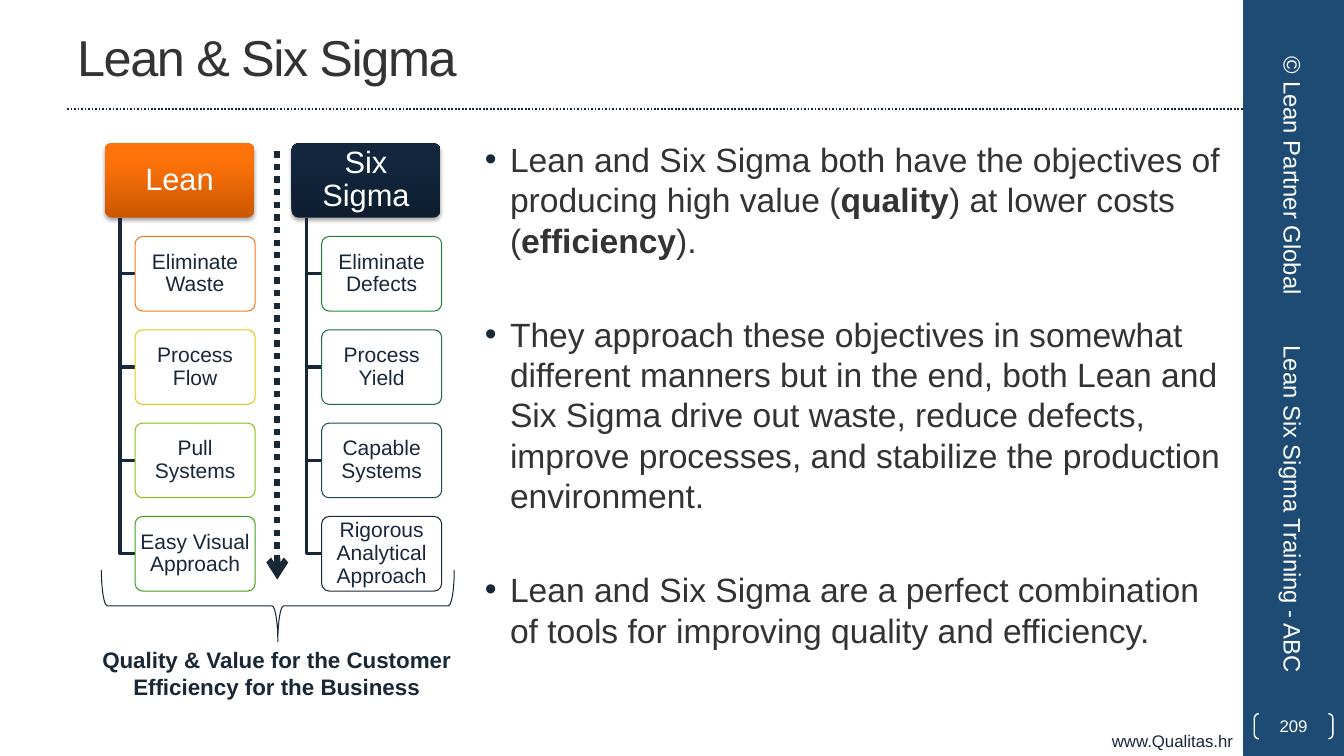
from lxml import etree
from pptx import Presentation, util as u
from pptx.dml.color import RGBColor
from pptx.enum import dml, shapes, text
from pptx.oxml import parse_xml
from pptx.oxml.ns import nsdecls, qn

W, H = 13.33, 7.5
SIDE = 12.33  # left edge of the side band
COLORS = {"white": "FFFFFF", "band": "1D4B74", "ink": "333333", "navy": "18283B",
          "rule": "17273B", "arrow": "182835"}
I = u.Inches
LEFT, CENTER, RIGHT = text.PP_ALIGN.LEFT, text.PP_ALIGN.CENTER, text.PP_ALIGN.RIGHT
TOP, MIDDLE = text.MSO_ANCHOR.TOP, text.MSO_ANCHOR.MIDDLE

prs = Presentation()
prs.slide_width, prs.slide_height = I(W), I(H)
s = prs.slides.add_slide(prs.slide_layouts[6])


def write(sp, paragraphs, size, color, align=LEFT, anchor=TOP, inset=(0.1, 0.05),
          bold=False, **para):
    """Fill a shape with text; every second part between asterisks is bold."""
    tf = sp.text_frame
    frame = {"word_wrap": True, "vertical_anchor": anchor,
             "margin_left": I(inset[0]), "margin_right": I(inset[0]),
             "margin_top": I(inset[1]), "margin_bottom": I(inset[1])}
    for name, value in frame.items():
        setattr(tf, name, value)
    for i, line in enumerate(paragraphs):
        p = tf.add_paragraph() if i else tf.paragraphs[0]
        for name, value in {"alignment": align, **para}.items():
            setattr(p, name, value)
        for j, part in enumerate(line.split("*")):
            r = p.add_run()
            r.text = part
            font = {"name": "Arial", "size": u.Pt(size), "bold": bold or j % 2 == 1}
            for name, value in font.items():
                setattr(r.font, name, value)
            r.font.color.rgb = RGBColor.from_string(COLORS[color])
    return tf


def style(sp, line=None, width=1, fill=None):
    """Set fill and outline from hex values and drop the theme shadow."""
    sp.shadow.inherit = False
    if fill:
        sp.fill.solid()
        sp.fill.fore_color.rgb = RGBColor.from_string(fill)
    else:
        sp.fill.background()
    if line:
        sp.line.color.rgb = RGBColor.from_string(line)
        sp.line.width = u.Pt(width)
    else:
        sp.line.fill.background()


# Side band
band = s.shapes.add_shape(shapes.MSO_SHAPE.RECTANGLE, I(SIDE), 0, I(W - SIDE), I(H))
style(band, fill=COLORS["band"])
for label, x, y, w, align in [("© Lean Partner Global", 11.24, 1.48, 3.17, CENTER),
                              ("Lean Six Sigma Training - ABC", 10.99, 4.9, 3.67, LEFT)]:
    sp = s.shapes.add_textbox(I(x), I(y), I(w), I(0.53))
    sp.rotation = 90
    write(sp, [label], 17, "white", align, MIDDLE)
number = s.shapes.add_shape(shapes.MSO_SHAPE.DOUBLE_BRACKET, I(12.44), I(7.08), I(0.78), I(0.25))
number.adjustments[0] = 0.18
style(number, COLORS["white"])
write(number, ["209"], 12, "white", CENTER, MIDDLE, (0, 0))

# Title and web address
title = s.shapes.add_textbox(I(W / 20), I(0.03), I(W * 5 / 6), I(1.05))
tf = write(title, ["Lean & Six Sigma"], 36, "ink", anchor=MIDDLE)
tf.paragraphs[0].runs[0].font._element.set("spc", "-100")
site = s.shapes.add_textbox(0, I(7.2), I(SIDE), I(0.3))
write(site, ["www.Qualitas.hr"], 12, "navy", RIGHT)

# Objectives
body = s.shapes.add_textbox(I(4.58), I(1.33), I(7.69), I(6))
tf = write(body, [
    "Lean and Six Sigma both have the objectives of producing high value (*quality*) "
    "at lower costs (*efficiency*).",
    "They approach these objectives in somewhat different manners but in the end, both Lean "
    "and Six Sigma drive out waste, reduce defects, improve processes, and stabilize the "
    "production environment.",
    "Lean and Six Sigma are a perfect combination of tools for improving quality and efficiency.",
], 24, "ink")
for i, p in enumerate(tf.paragraphs):
    if i:
        p.space_before = u.Pt(38.4)
    pPr = p._p.get_or_add_pPr()
    pPr.set("marL", str(I(0.38)))
    pPr.set("indent", str(-I(0.25)))
    color = etree.SubElement(pPr, qn("a:buClr"))
    etree.SubElement(color, qn("a:srgbClr"), val=COLORS["navy"])
    etree.SubElement(pPr, qn("a:buFont"), typeface="Arial")
    etree.SubElement(pPr, qn("a:buChar"), char="•")

# Two trees: header, elbows and four boxes each
BOX_H, ROW, COL, STEP = 0.74, 0.926, 1.85, 0.15
TREES = [
    ("Lean", ["CC5700", "FF730A", "FF730B"],
     [("Eliminate Waste", "F4791D"), ("Process Flow", "E2C814"),
      ("Pull Systems", "8CC119"), ("Easy Visual Approach", "3DA31D")]),
    ("Six Sigma", ["0E1E30", "12263E", "11263F"],
     [("Eliminate Defects", "1E8634"), ("Process Yield", "1E6B50"),
      ("Capable Systems", "1C4D52"), ("Rigorous Analytical Approach", "18283B")]),
]
for col, (name, shades, leaves) in enumerate(TREES):
    x, y = 1.04 + col * COL, 1.42
    head = s.shapes.add_shape(shapes.MSO_SHAPE.ROUNDED_RECTANGLE, I(x), I(y), I(1.48), I(BOX_H))
    head.adjustments[0] = 0.1
    style(head)
    stops = "".join(f'<a:gs pos="{pos}000"><a:srgbClr val="{c}"/></a:gs>'
                    for pos, c in zip((0, 80, 100), shades))
    spPr = head._element.spPr
    spPr.replace(spPr.find(qn("a:noFill")), parse_xml(
        f'<a:gradFill {nsdecls("a")} rotWithShape="1"><a:gsLst>{stops}</a:gsLst>'
        '<a:lin ang="16200000" scaled="0"/></a:gradFill>'))
    spPr.find(qn("a:effectLst")).append(parse_xml(
        f'<a:outerShdw {nsdecls("a")} blurRad="{u.Pt(3.1)}" dist="{u.Pt(1.8)}" dir="5400000" '
        'rotWithShape="0"><a:srgbClr val="000000"><a:alpha val="35000"/></a:srgbClr>'
        '</a:outerShdw>'))
    write(head, [name], 22, "white", CENTER, MIDDLE, (0.05, 0.03), line_spacing=0.9)

    trunk, branch = x + STEP, x + 2 * STEP
    for row, (leaf, outline) in enumerate(leaves, 1):
        top = y + row * ROW
        mid = top + BOX_H / 2
        path = s.shapes.build_freeform(I(trunk), I(y + BOX_H))
        path.add_line_segments([(I(trunk), I(mid)), (I(branch), I(mid))], close=False)
        style(path.convert_to_shape(), COLORS["navy"], 2.25)
        box = s.shapes.add_shape(shapes.MSO_SHAPE.ROUNDED_RECTANGLE,
                                 I(branch), I(top), I(1.19), I(BOX_H))
        box.adjustments[0] = 0.1
        style(box, outline, 0.75, COLORS["white"])
        alpha = box._element.spPr.find(qn("a:solidFill"))[0]
        etree.SubElement(alpha, qn("a:alpha"), val="90000")
        write(box, [leaf], 15, "navy", CENTER, MIDDLE, (0.03, 0.02), line_spacing=0.9)

# Dotted rule and dotted arrow
for x1, y1, x2, y2, color, width, tail in [(W / 20, 1.08, SIDE, 1.08, "rule", 1.25, False),
                                           (2.75, 1.5, 2.75, 5.75, "arrow", 4.5, True)]:
    line = s.shapes.add_connector(shapes.MSO_CONNECTOR.STRAIGHT, I(x1), I(y1), I(x2), I(y2))
    line.line.color.rgb = RGBColor.from_string(COLORS[color])
    line.line.width = u.Pt(width)
    line.line.dash_style = dml.MSO_LINE.ROUND_DOT
    if tail:
        etree.SubElement(line.line._get_or_add_ln(), qn("a:tailEnd"), type="arrow")
    etree.SubElement(line._element.spPr, qn("a:effectLst"))

# Brace and shared result
brace = s.shapes.add_shape(shapes.MSO_SHAPE.RIGHT_BRACE, I(2.4), I(4.26), I(0.71), I(3.5))
brace.rotation = 90
style(brace, COLORS["arrow"], 0.75)
result = s.shapes.add_textbox(I(0.83), I(6.36), I(3.83), I(0.64))
write(result, ["Quality & Value for the Customer", "Efficiency for the Business"],
      16, "arrow", CENTER, bold=True)

prs.save("out.pptx")
